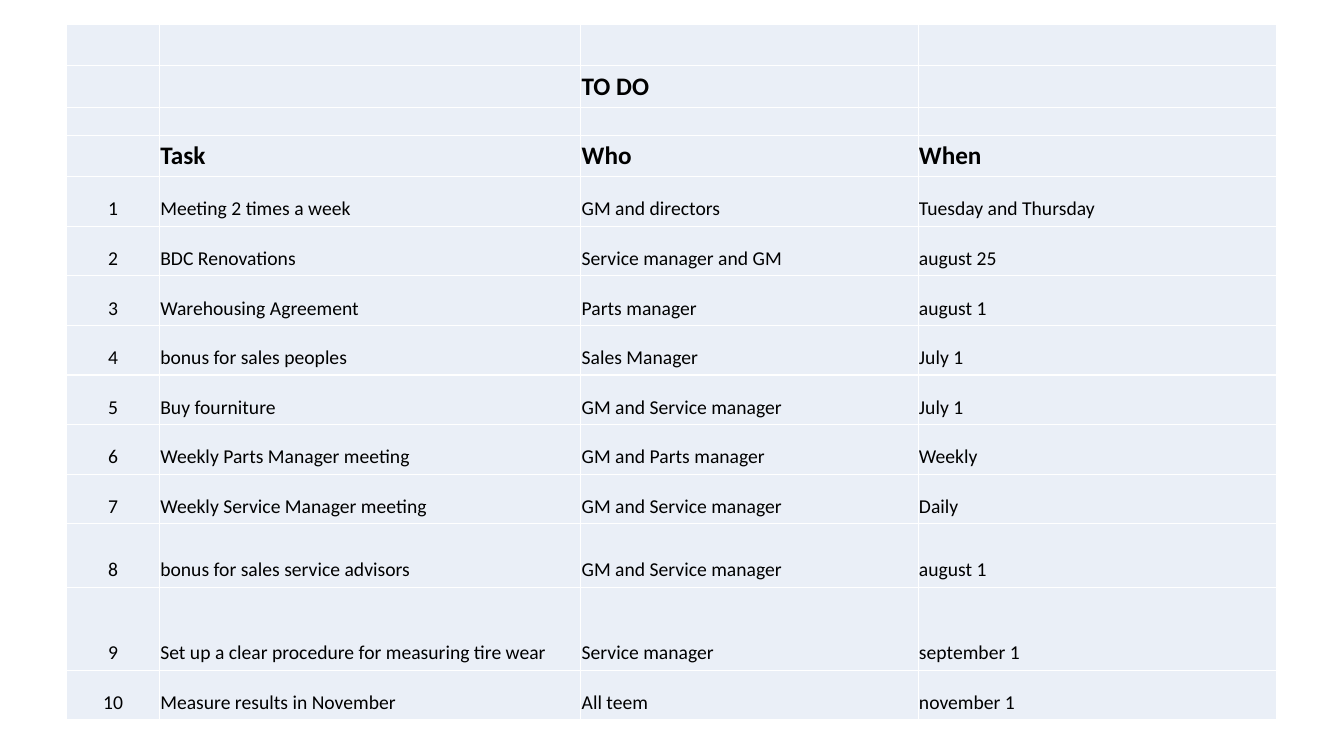
from dataclasses import dataclass

from lxml import etree
from pptx import Presentation
from pptx.dml.color import RGBColor
from pptx.enum import text
from pptx.oxml import ns
from pptx.util import Cm, Pt


@dataclass
class Theme:
    font: str = "Calibri"
    ink: str = "000000"
    fill: str = "EAEFF7"
    border: str = "FFFFFF"
    head_size: int = 18
    body_size: int = 14
    empty_size: int = 10


theme = Theme()


def add_borders(cell):
    tcPr = cell._tc.get_or_add_tcPr()
    for side in ("lnL", "lnR", "lnT", "lnB"):
        ln = etree.SubElement(tcPr, ns.qn(f"a:{side}"), w=str(Pt(1)))
        solid = etree.SubElement(ln, ns.qn("a:solidFill"))
        etree.SubElement(solid, ns.qn("a:srgbClr"), val=theme.border)


tasks = [
    ("Meeting 2 times a week", "GM and directors", "Tuesday and Thursday"),
    ("BDC Renovations", "Service manager and GM", "august 25"),
    ("Warehousing Agreement", "Parts manager", "august 1"),
    ("bonus for sales peoples", "Sales Manager", "July 1"),
    ("Buy fourniture", "GM and Service manager", "July 1"),
    ("Weekly Parts Manager meeting", "GM and Parts manager", "Weekly"),
    ("Weekly Service Manager meeting", "GM and Service manager", "Daily"),
    ("bonus for sales service advisors", "GM and Service manager", "august 1"),
    ("Set up a clear procedure for measuring tire wear", "Service manager", "september 1"),
    ("Measure results in November", "All teem", "november 1"),
]
head_rows = [
    ("", "", "", ""),
    ("", "", "TO DO", ""),
    ("", "", "", ""),
    ("", "Task", "Who", "When"),
]
rows = head_rows + [(str(n), *task) for n, task in enumerate(tasks, 1)]
col_widths = [2.34, 10.62, 8.5, 9.02]
row_heights = [1.04, 1.04, 0.71, 1.04] + [1.25] * 7 + [1.6, 2.09, 1.25]

prs = Presentation()
prs.slide_width, prs.slide_height = Cm(33.87), Cm(19.05)
s = prs.slides.add_slide(prs.slide_layouts[6])

table = s.shapes.add_table(
    len(rows), len(col_widths), Cm(1.68), Cm(0.62),
    Cm(sum(col_widths)), Cm(sum(row_heights))).table
for col, width in zip(table.columns, col_widths):
    col.width = Cm(width)
for row, height in zip(table.rows, row_heights):
    row.height = Cm(height)

for i, values in enumerate(rows):
    is_head = i < len(head_rows)
    for j, value in enumerate(values):
        cell = table.cell(i, j)
        add_borders(cell)
        cell.fill.solid()
        cell.fill.fore_color.rgb = RGBColor.from_string(theme.fill)
        cell.margin_left = cell.margin_right = cell.margin_top = Cm(0.02)
        cell.margin_bottom = Cm(0.13)
        cell.vertical_anchor = text.MSO_ANCHOR.BOTTOM
        p = cell.text_frame.paragraphs[0]
        if not value:
            etree.SubElement(p._p, ns.qn("a:endParaRPr"), sz=str(theme.empty_size * 100))
            continue
        p.text = value
        p.alignment = text.PP_ALIGN.LEFT if j else text.PP_ALIGN.CENTER
        font = p.runs[0].font
        font.name = theme.font
        font.size = Pt(theme.head_size if is_head else theme.body_size)
        font.bold = is_head
        font.color.rgb = RGBColor.from_string(theme.ink)

prs.save("out.pptx")
